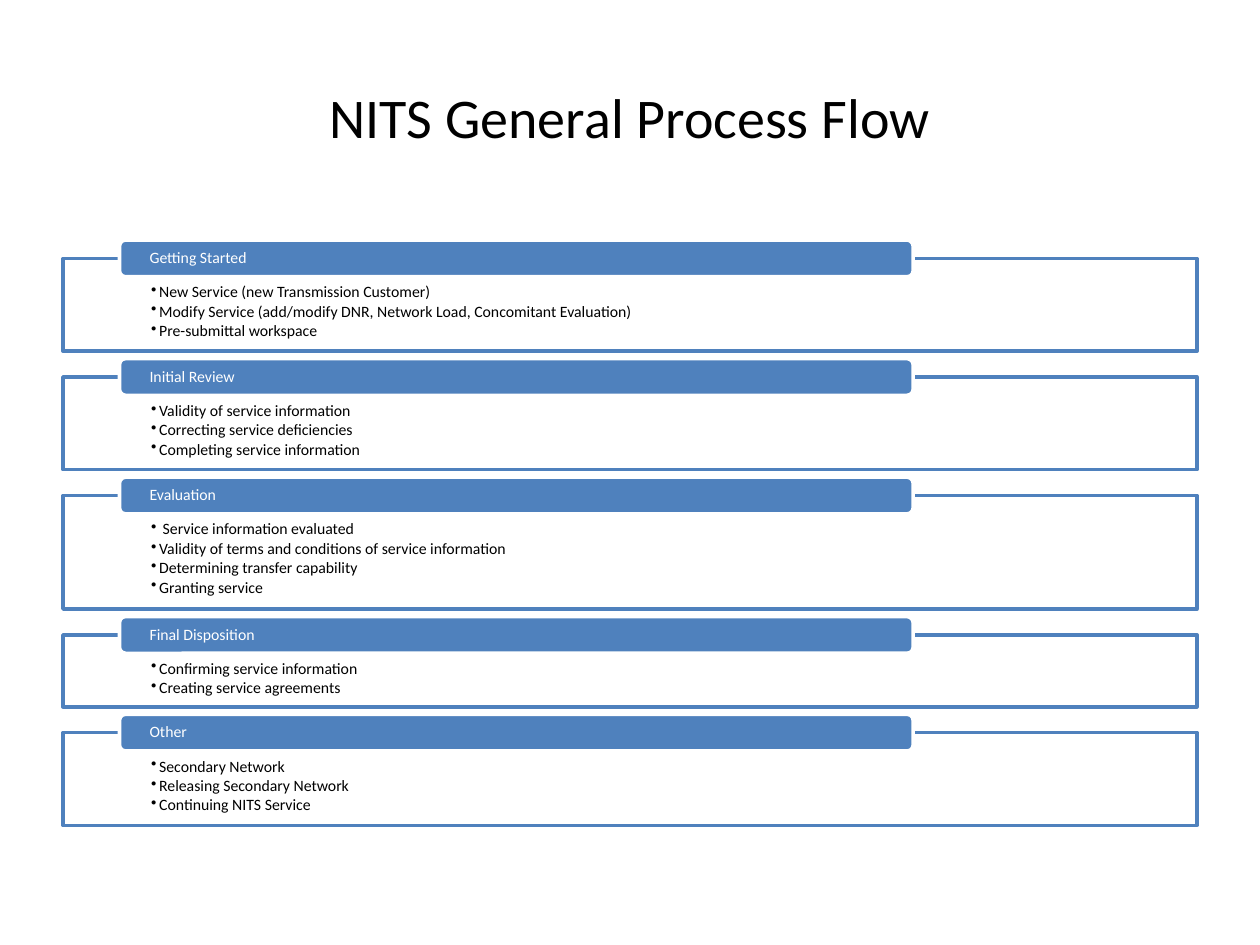
from dataclasses import dataclass

from pptx import Presentation
from pptx.dml.color import RGBColor
from pptx.enum.shapes import MSO_SHAPE as Shape
from pptx.enum.text import MSO_ANCHOR as Anchor, PP_ALIGN as Align
from pptx.oxml.ns import qn
from pptx.util import Cm, Pt
from lxml.etree import SubElement

TITLE = "NITS General Process Flow"
STAGES = [
    ("Getting Started", [
        "New Service (new Transmission Customer)",
        "Modify Service (add/modify DNR, Network Load, Concomitant Evaluation)",
        "Pre-submittal workspace",
    ]),
    ("Initial Review", [
        "Validity of service information",
        "Correcting service deficiencies",
        "Completing service information",
    ]),
    ("Evaluation", [
        " Service information evaluated",
        "Validity of terms and conditions of service information",
        "Determining transfer capability",
        "Granting service",
    ]),
    ("Final Disposition", [
        "Confirming service information",
        "Creating service agreements",
    ]),
    ("Other", [
        "Secondary Network",
        "Releasing Secondary Network",
        "Continuing NITS Service",
    ]),
]


@dataclass(frozen=True)
class Theme:
    font: str = "Calibri"
    title_size: float = 32
    body_size: float = 9
    accent: RGBColor = RGBColor(0x4F, 0x81, 0xBD)
    white: RGBColor = RGBColor(0xFF, 0xFF, 0xFF)
    black: RGBColor = RGBColor(0, 0, 0)
    line_width: float = 2
    panel_opacity: int = 90


THEME = Theme()

# Lengths in centimetres
PANEL_LEFT, PANEL_WIDTH, FIRST_TOP = 1.27, 22.86, 5.21
PANEL_PADDING, ITEM_HEIGHT, PANEL_GAP = 0.61, 0.42, 0.52
HEADER_LEFT, HEADER_WIDTH, HEADER_HEIGHT = 2.41, 16, 0.74
HEADER_RISE = HEADER_HEIGHT / 2
BULLET_INDENT = 0.16


def set_frame(box, anchor, side, top=0, bottom=0):
    frame = box.text_frame
    frame.word_wrap = True
    frame.vertical_anchor = anchor
    frame.margin_left = frame.margin_right = Cm(side)
    frame.margin_top, frame.margin_bottom = Cm(top), Cm(bottom)
    return frame


def add_text(para, text, size, color, align=Align.LEFT):
    para.alignment = align
    span = para.add_run()
    span.text = text
    span.font.name = THEME.font
    span.font.size = Pt(size)
    span.font.color.rgb = color


def add_bullet(para):
    properties = para._p.get_or_add_pPr()
    properties.set("marL", str(Cm(BULLET_INDENT)))
    properties.set("indent", str(-Cm(BULLET_INDENT)))
    SubElement(properties, qn("a:buChar")).set("char", "•")


def add_box(page, kind, left, top, width, height, fill, line):
    box = page.shapes.add_shape(kind, Cm(left), Cm(top), Cm(width), Cm(height))
    box.shadow.inherit = False
    box.fill.solid()
    box.fill.fore_color.rgb = fill
    box.line.color.rgb = line
    box.line.width = Pt(THEME.line_width)
    return box


def add_panel(page, top, height, items):
    box = add_box(page, Shape.RECTANGLE, PANEL_LEFT, top, PANEL_WIDTH, height,
                  THEME.white, THEME.accent)
    color = box.fill._xPr.find(qn("a:solidFill"))[0]
    SubElement(color, qn("a:alpha")).set("val", str(THEME.panel_opacity * 1000))
    frame = set_frame(box, Anchor.TOP, side=1.78, top=0.52, bottom=0.18)
    for index, item in enumerate(items):
        para = frame.add_paragraph() if index else frame.paragraphs[0]
        para.line_spacing = 0.9
        para.space_after = Pt(THEME.body_size * 0.15)
        add_bullet(para)
        add_text(para, item, THEME.body_size, THEME.black)


def add_header(page, top, name):
    box = add_box(page, Shape.ROUNDED_RECTANGLE, HEADER_LEFT, top,
                  HEADER_WIDTH, HEADER_HEIGHT, THEME.accent, THEME.white)
    para = set_frame(box, Anchor.MIDDLE, side=0.57).paragraphs[0]
    para.line_spacing = 0.9
    add_text(para, name, THEME.body_size, THEME.white)


def main():
    deck = Presentation()
    deck.slide_width, deck.slide_height = Cm(25.4), Cm(19.05)
    page = deck.slides.add_slide(deck.slide_layouts[6])

    title = page.shapes.add_textbox(Cm(PANEL_LEFT), Cm(0.76), Cm(PANEL_WIDTH), Cm(3.18))
    frame = set_frame(title, Anchor.MIDDLE, side=0.25)
    add_text(frame.paragraphs[0], TITLE, THEME.title_size, THEME.black, Align.CENTER)

    top = FIRST_TOP
    for name, items in STAGES:
        height = PANEL_PADDING + ITEM_HEIGHT * len(items)
        add_panel(page, top, height, items)
        add_header(page, top - HEADER_RISE, name)
        top += height + PANEL_GAP

    deck.save("out.pptx")


if __name__ == "__main__":
    main()
